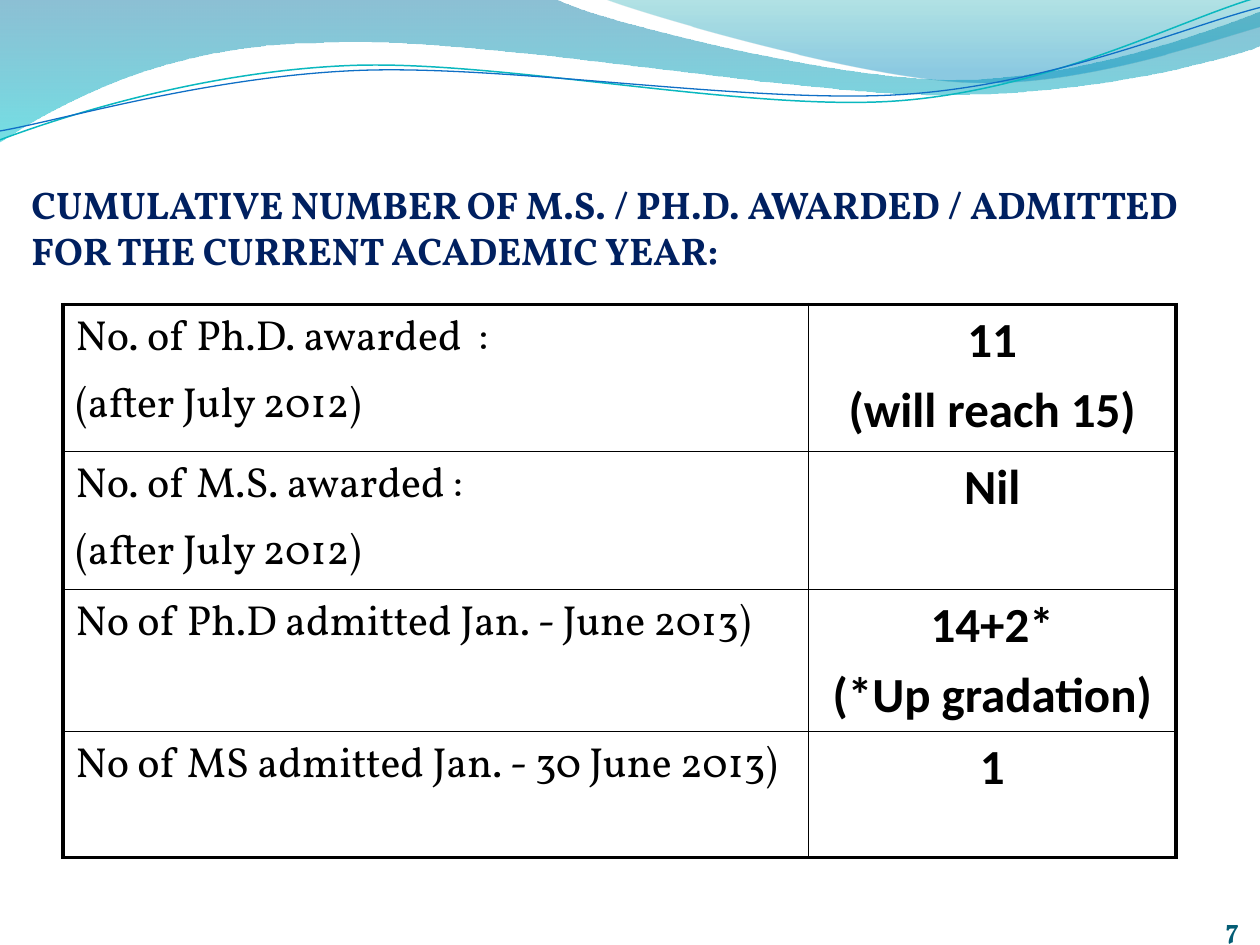
"""Build the slide on M.S. and Ph.D. degrees awarded and admitted."""
from math import cos, radians, sin

from lxml.etree import SubElement
from pptx import Presentation
from pptx.dml.color import RGBColor
from pptx.enum.text import MSO_ANCHOR as ANCHOR, PP_ALIGN as ALIGN
from pptx.oxml import parse_xml
from pptx.oxml.ns import nsdecls, qn
from pptx.util import Pt

BLACK = RGBColor(0x00, 0x00, 0x00)
NAVY = RGBColor(0x00, 0x20, 0x60)
PETROL = RGBColor(0x04, 0x5D, 0x75)
DEEP_BLUE = RGBColor(0x00, 0x74, 0xA1)
AQUA = RGBColor(0x00, 0xC6, 0xCF)
TEAL = RGBColor(0x00, 0xA1, 0xA9)
SKY = RGBColor(0x00, 0x8B, 0xBF)
LINE_TEAL = RGBColor(0x0A, 0xB8, 0xBF)
LINE_BLUE = RGBColor(0x0F, 0x6F, 0xC6)
SERIF, SANS = "Vollkorn", "Calibri"
TILT = 2.7

prs = Presentation()
prs.slide_width, prs.slide_height = Pt(720), Pt(540)
s = prs.slides.add_slide(prs.slide_layouts[6])


def add_outline(segments, close):
    """Draw a freeform in 1/72 of a point grid: 1 point is a line, 3 a Bézier curve."""
    points = [(Pt(x * 72), Pt(y * 72)) for seg in segments for x, y in seg]
    fb = s.shapes.build_freeform(*points[0], scale=1.0)
    fb.add_line_segments(points[1:], close=close)
    sp = fb.convert_to_shape()
    sp.shadow.inherit = False
    nodes = iter(list(sp._element.iter(qn("a:lnTo"))))
    for seg in segments[1:]:
        first, *others = [next(nodes) for _ in seg]
        if others:
            curve = parse_xml(f'<a:cubicBezTo {nsdecls("a")}/>')
            first.addprevious(curve)
            for node in (first, *others):
                curve.append(node[0])
                node.getparent().remove(node)
    return sp


def add_run(p, text, size, font, color, bold):
    r = p.add_run()
    r.text = text
    r.font.size, r.font.name, r.font.bold = Pt(size), font, bold
    r.font.color.rgb = color


waves = [
    ([[(0, -0.01)], [(4.4, -0.01)], [(4.76, 0.17), (6.64, 0.63), (7.58, 0.63)],
      [(8.53, 0.63), (9.58, 0.26), (10, 0.09)], [(10.01, 0.36)],
      [(9.83, 0.44), (8.7, 0.76), (7.46, 0.75)], [(6.22, 0.75), (3.82, 0.28), (2.57, 0.34)],
      [(1.29, 0.35), (0.46, 0.83), (-0.01, 1.13)], [(0, -0.01)]],
     [(0, DEEP_BLUE, 45), (1, AQUA, 55)]),
    ([[(4.79, -0.01)], [(5.09, 0.11), (6.82, 0.62), (7.69, 0.65)],
      [(8.56, 0.69), (9.61, 0.32), (10, 0.21)], [(10, 0)], [(4.79, -0.01)]],
     [(0, TEAL, 30), (0.8, SKY, 45)]),
]
for segments, stops in waves:
    sp = add_outline(segments, True)
    sp.line.fill.background()
    sp.fill.gradient()
    sp.fill.gradient_angle = 270
    for stop, (position, color, _) in zip(sp.fill.gradient_stops, stops):
        stop.position = position
        stop.color.rgb = color
    for clr, (_, _, alpha) in zip(sp.fill._xPr.iter(qn("a:srgbClr")), stops):
        SubElement(clr, qn("a:alpha")).set("val", str(alpha * 1000))

curves = [
    ([[(0, 1.11)], [(0.48, 0.93), (1.58, 0.57), (2.77, 0.52)],
      [(3.95, 0.47), (5.93, 0.89), (7.13, 0.8)], [(8.33, 0.71), (9.38, 0.15), (9.98, -0.02)]],
     (4.99, 0.58), LINE_TEAL, 0.85),
    ([[(0, 1.04)], [(0.47, 0.96), (1.64, 0.61), (2.83, 0.56)],
      [(4.03, 0.51), (5.97, 0.83), (7.17, 0.75)], [(8.36, 0.67), (9.41, 0.21), (10, 0.06)]],
     (5, 0.59), LINE_BLUE, 0.75),
]
co, si = cos(radians(TILT)), sin(radians(TILT))
for segments, (cx, cy), color, width in curves:
    level = [[(cx + (x - cx) * co - (y - cy) * si, cy + (x - cx) * si + (y - cy) * co)
              for x, y in seg] for seg in segments]
    sp = add_outline(level, False)
    sp.rotation = -TILT
    sp.fill.background()
    sp.line.color.rgb, sp.line.width = color, Pt(width)

labels = [
    ("CUMULATIVE NUMBER OF M.S. / PH.D. AWARDED / ADMITTED FOR THE CURRENT ACADEMIC YEAR:",
     (18, 60, 684, 96), 3.6, 22, NAVY, ALIGN.LEFT),
    ("7", (648, 511, 60, 29), 0, 16, PETROL, ALIGN.RIGHT),
]
for text, box, top, size, color, align in labels:
    tf = s.shapes.add_textbox(*map(Pt, box)).text_frame
    tf.word_wrap, tf.vertical_anchor = True, ANCHOR.BOTTOM
    tf.margin_left = tf.margin_right = tf.margin_bottom = 0
    tf.margin_top = Pt(top)
    tf.paragraphs[0].alignment = align
    add_run(tf.paragraphs[0], text, size, SERIF, color, True)

rows = [
    (["No. of Ph.D. awarded  :", "(after July 2012)"], ["11", "(will reach 15)"]),
    (["No. of M.S. awarded :", "(after July 2012)"], ["Nil"]),
    (["No of Ph.D admitted Jan. - June 2013)"], ["14+2*", "(*Up gradation)"]),
    (["No of MS admitted Jan. - 30 June 2013)"], ["1"]),
]
styles = [(24, SERIF, False, ALIGN.LEFT), (28, SANS, True, ALIGN.CENTER)]
table = s.shapes.add_table(4, 2, Pt(36), Pt(174), Pt(636), Pt(316)).table
table.first_row = table.horz_banding = False
for col, width in zip(table.columns, (426, 210)):
    col.width = Pt(width)
for row, height in zip(table.rows, (84, 79, 81, 72)):
    row.height = Pt(height)

for i, row in enumerate(rows):
    for j, (lines, (size, font, bold, align)) in enumerate(zip(row, styles)):
        cell = table.cell(i, j)
        cell.fill.background()
        tf = cell.text_frame
        for k, text in enumerate(lines):
            p = tf.add_paragraph() if k else tf.paragraphs[0]
            p.alignment, p.space_before = align, Pt(size * 0.2)
            add_run(p, text, size, font, BLACK, bold)
        outer = {"L": j == 0, "R": j == 1, "T": i == 0, "B": i == 3}
        for k, (side, is_outer) in enumerate(outer.items()):
            width = Pt(2.25 if is_outer else 1)
            cell._tc.get_or_add_tcPr().insert(k, parse_xml(
                f'<a:ln{side} {nsdecls("a")} w="{width}"><a:solidFill>'
                f'<a:srgbClr val="{BLACK}"/></a:solidFill></a:ln{side}>'))

prs.save("out.pptx")
